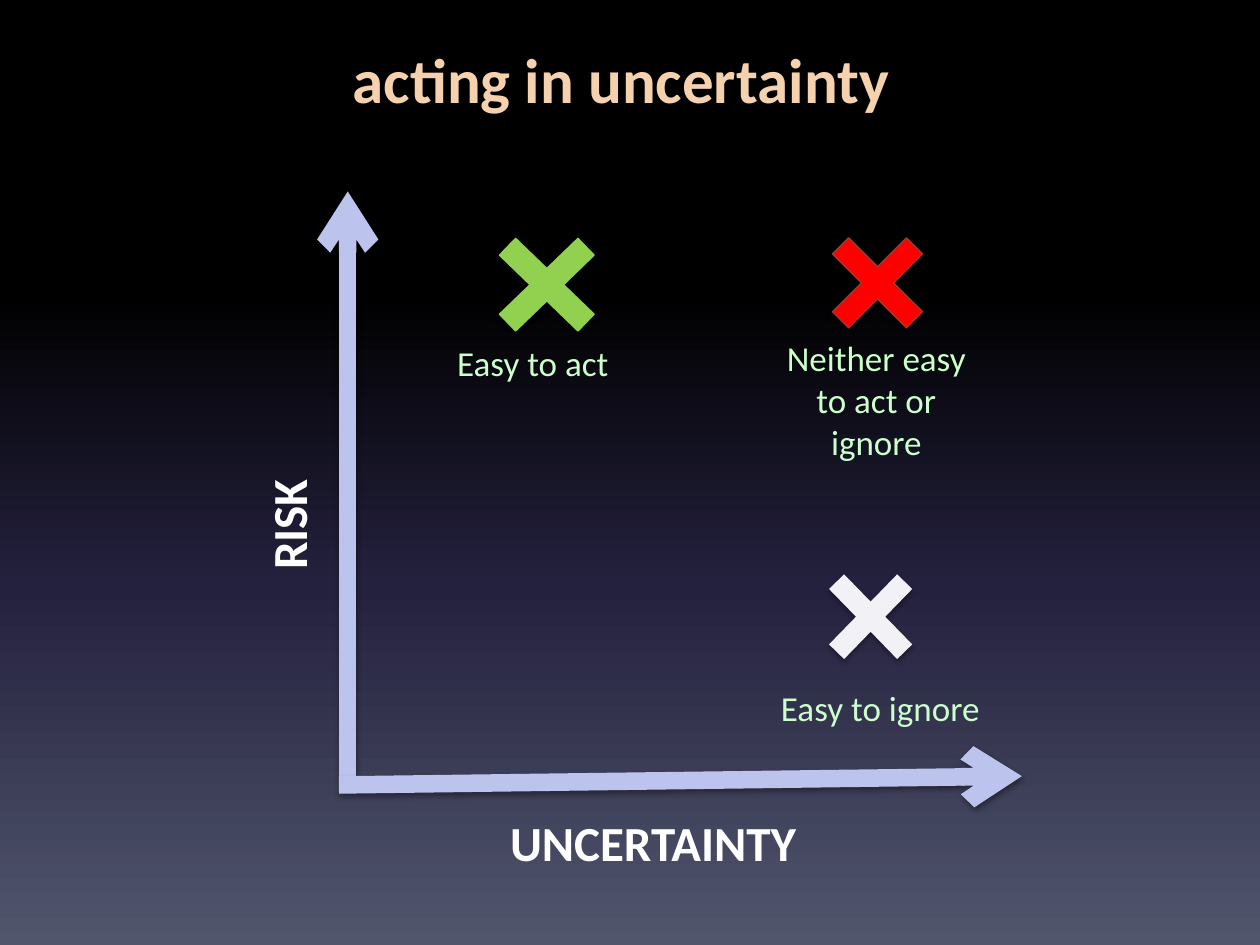
from copy import deepcopy

from lxml.etree import SubElement
from pptx import Presentation
from pptx.dml.color import RGBColor
from pptx.enum.shapes import MSO_CONNECTOR, MSO_SHAPE
from pptx.enum.text import MSO_ANCHOR, PP_ALIGN
from pptx.oxml.ns import qn
from pptx.util import Inches, Pt

COLORS = {
    "title": "F5D1AE",
    "axis": "BCC4ED",
    "axis name": "FFFFFF",
    "label": "CCFFCC",
    "act": "92D050",
    "neither": "FF0000",
    "neither edge": "9C3D28",
    "ignore": "F2F2F6",
    "shadow": "000000",
}
BACKGROUND_STOPS = [(0, "000000"), (0.31, "000000"), (0.62, "24213E"), (1, "51566D")]


def add_text(shapes, box, text, size, color, bold=False, align=PP_ALIGN.LEFT, wrap=True):
    shape = shapes.add_textbox(*[Inches(length) for length in box])
    frame = shape.text_frame
    frame.word_wrap = wrap
    frame.vertical_anchor = MSO_ANCHOR.TOP
    paragraph = frame.paragraphs[0]
    paragraph.alignment = align
    run = paragraph.add_run()
    run.text = text
    run.font.name = "Calibri"
    run.font.size = Pt(size)
    run.font.bold = bold
    run.font.color.rgb = RGBColor.from_string(COLORS[color])
    return shape


def add_shadow(effects, distance, opacity):
    shadow = SubElement(effects, qn("a:outerShdw"), blurRad=str(Pt(3.1)),
                        dist=str(Pt(distance)), dir="5400000", rotWithShape="0")
    color = SubElement(shadow, qn("a:srgbClr"), val=COLORS["shadow"])
    SubElement(color, qn("a:alpha"), val=str(opacity * 1000))


presentation = Presentation()
presentation.slide_width = Inches(10)
presentation.slide_height = Inches(7.5)
slide = presentation.slides.add_slide(presentation.slide_layouts[6])

# Background, dark at the top
background = slide.background.fill
background.gradient()
background.gradient_angle = 270
stop_list = slide.background._cSld.find(".//" + qn("a:gsLst"))
for extra in range(len(BACKGROUND_STOPS) - len(stop_list)):
    stop_list.append(deepcopy(stop_list[0]))
for stop, (position, color) in zip(background.gradient_stops, BACKGROUND_STOPS):
    stop.position = position
    stop.color.rgb = RGBColor.from_string(color)

# Title
add_text(slide.shapes, (0.43, 0.27, 9, 1.1), "acting in uncertainty", 36, "title",
         bold=True, align=PP_ALIGN.CENTER)

# Axes
for ends in [(2.76, 6.16, 2.76, 1.52), (2.69, 6.23, 8.11, 6.16)]:
    axis = slide.shapes.add_connector(MSO_CONNECTOR.STRAIGHT, *[Inches(end) for end in ends])
    axis.line.color.rgb = RGBColor.from_string(COLORS["axis"])
    axis.line.width = Pt(10)
    SubElement(axis.line._get_or_add_ln(), qn("a:tailEnd"), type="arrow")
    add_shadow(SubElement(axis._element.spPr, qn("a:effectLst")), 1.6, 38)

# Axis names
add_text(slide.shapes, (3.95, 6.4, 2.5, 0.57), "UNCERTAINTY", 28, "axis name",
         bold=True, wrap=False)
risk = add_text(slide.shapes, (1.77, 3.82, 1.03, 0.57), "RISK", 28, "axis name", bold=True)
risk.rotation = 270

# Crosses, each grouped with its label
POINTS = [
    ((3.74, 1.68, 1.2, 1.16), "act", "act",
     (3.53, 2.66, 1.71, 0.48), "Easy to act", PP_ALIGN.LEFT),
    ((6.4, 1.68, 1.13, 1.13), "neither", "neither edge",
     (6.1, 2.62, 1.71, 1.22), "Neither easy to act or ignore", PP_ALIGN.CENTER),
    ((6.39, 4.36, 1.04, 1.07), "ignore", None,
     (6.1, 5.4, 1.97, 0.48), "Easy to ignore", PP_ALIGN.LEFT),
]
for cross_box, fill, edge, label_box, label, align in POINTS:
    group = slide.shapes.add_group_shape()
    cross = group.shapes.add_shape(MSO_SHAPE.MATH_MULTIPLY,
                                   *[Inches(length) for length in cross_box])
    cross.adjustments[0] = 0.16
    cross.fill.solid()
    cross.fill.fore_color.rgb = RGBColor.from_string(COLORS[fill])
    if edge:
        cross.line.color.rgb = RGBColor.from_string(COLORS[edge])
        cross.line.width = Pt(0.75)
    else:
        cross.line.fill.background()
    cross.shadow.inherit = False
    add_shadow(cross._element.spPr.find(qn("a:effectLst")), 1.8, 35)
    add_text(group.shapes, label_box, label, 20, "label", align=align)

presentation.save("out.pptx")
